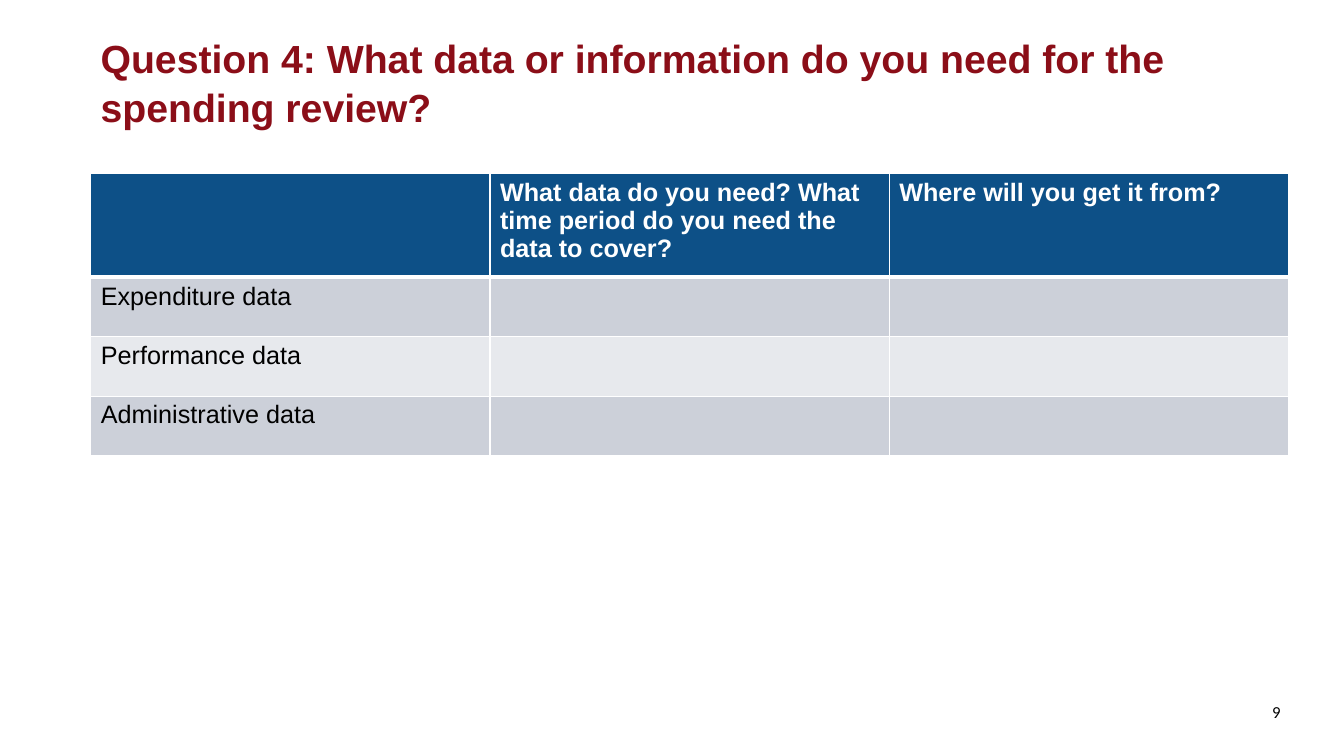
from lxml import etree
from pptx import Presentation
from pptx import util as u
from pptx.dml.color import RGBColor
from pptx.enum import text
from pptx.oxml import ns

WHITE = RGBColor(0xFF, 0xFF, 0xFF)
BLACK = RGBColor(0, 0, 0)
CRIMSON = RGBColor(0x8B, 0x0E, 0x18)
NAVY = RGBColor(0x0D, 0x50, 0x87)
BAND_DARK = RGBColor(0xCC, 0xD0, 0xD9)
BAND_LIGHT = RGBColor(0xE7, 0xE9, 0xED)

LEFT = 0.9
COLUMN = 3.96
HEADER_ROW, DATA_ROW = 1.03, 0.59
DATA_NEEDS = [
    ["", "What data do you need? What time period do you need the data to cover?",
     "Where will you get it from?"],
    ["Expenditure data", "", ""],
    ["Performance data", "", ""],
    ["Administrative data", "", ""],
]


def style(para, size, color, bold=False, name="Arial"):
    font = para.font
    font.name, font.size, font.bold = name, u.Pt(size), bold
    font.color.rgb = color


def add_text(page, area, words, anchor, align):
    box = page.shapes.add_textbox(*(u.Inches(length) for length in area))
    frame = box.text_frame
    frame.word_wrap = True
    frame.vertical_anchor = anchor
    para = frame.paragraphs[0]
    para.text, para.alignment = words, align
    return para


def set_borders(cell, bottom):
    """Draw white rules round a cell; widths are in points."""
    props = cell._tc.get_or_add_tcPr()
    widths = {"a:lnL": 1, "a:lnR": 1, "a:lnT": 1, "a:lnB": bottom}
    for index, (side, width) in enumerate(widths.items()):
        line = etree.Element(ns.qn(side), w=str(u.Pt(width)))
        fill = etree.SubElement(line, ns.qn("a:solidFill"))
        etree.SubElement(fill, ns.qn("a:srgbClr"), val=str(WHITE))
        props.insert(index, line)


def add_grid(page, top, rows):
    columns = len(rows[0])
    height = HEADER_ROW + DATA_ROW * (len(rows) - 1)
    table = page.shapes.add_table(
        len(rows), columns, u.Inches(LEFT), u.Inches(top),
        u.Inches(COLUMN * columns), u.Inches(height)).table
    for r, words in enumerate(rows):
        header = r == 0
        table.rows[r].height = u.Inches(HEADER_ROW if header else DATA_ROW)
        band = NAVY if header else BAND_DARK if r % 2 else BAND_LIGHT
        for c, word in enumerate(words):
            cell = table.cell(r, c)
            cell.text = word
            cell.fill.solid()
            cell.fill.fore_color.rgb = band
            style(cell.text_frame.paragraphs[0], 18,
                  WHITE if header else BLACK, bold=header)
            # The rule under the header is heavier
            set_borders(cell, bottom=3 if header else 1)


def main():
    deck = Presentation()
    deck.slide_width, deck.slide_height = u.Inches(13.33), u.Inches(7.5)
    page = deck.slides.add_slide(deck.slide_layouts[6])

    # Page number
    number = add_text(page, (12.04, 6.91, 0.76, 0.39), "9",
                      text.MSO_ANCHOR.TOP, text.PP_ALIGN.RIGHT)
    style(number, 12, BLACK, name="Calibri")

    # Title
    title = add_text(
        page, (LEFT, 0.27, 11.51, 1.07),
        "Question 4: What data or information do you need for the spending review?",
        text.MSO_ANCHOR.MIDDLE, text.PP_ALIGN.LEFT)
    title.line_spacing = 1.04
    style(title, 28, CRIMSON, bold=True)

    # Data needs table
    add_grid(page, 1.72, DATA_NEEDS)
    deck.save("out.pptx")


if __name__ == "__main__":
    main()
